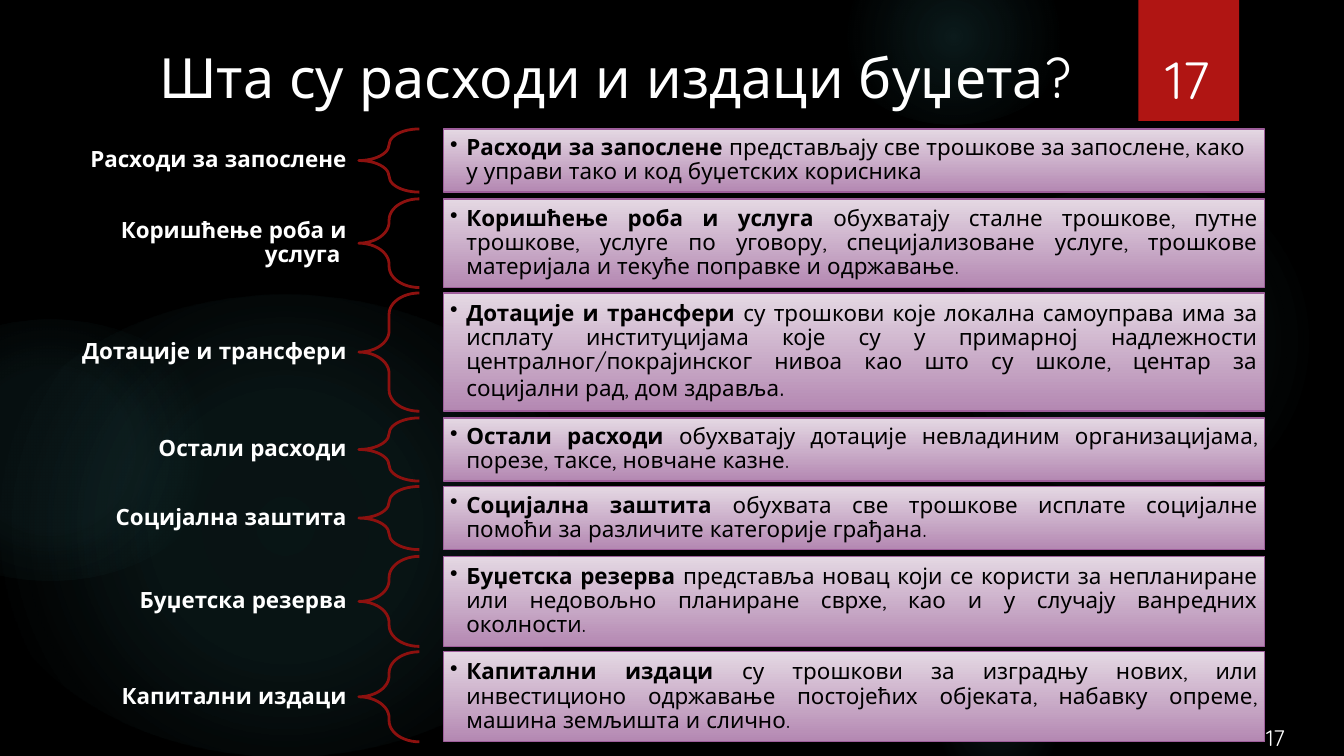
from lxml import etree
from pptx import Presentation
from pptx.dml.color import RGBColor
from pptx.enum.shapes import MSO_SHAPE
from pptx.enum.text import MSO_ANCHOR, PP_ALIGN
from pptx.oxml import parse_xml
from pptx.oxml.ns import nsdecls, qn
from pptx.util import Inches, Pt

OVAL = MSO_SHAPE.OVAL
RECTANGLE = MSO_SHAPE.RECTANGLE
LEFT_BRACE = MSO_SHAPE.LEFT_BRACE
MIDDLE = MSO_ANCHOR.MIDDLE
BOTTOM = MSO_ANCHOR.BOTTOM
LEFT = PP_ALIGN.LEFT
CENTER = PP_ALIGN.CENTER
RIGHT = PP_ALIGN.RIGHT
JUSTIFY = PP_ALIGN.JUSTIFY

COLORS = {
    "background": "000000",
    "glow": "50B9C1",
    "ribbon": "B01513",
    "brace": "8D110F",
    "box_top": "E4D8E3",
    "box_bottom": "B488B2",
    "box_line": "9E5E9B",
    "light_text": "FFFFFF",
    "dark_text": "000000",
}

GLOWS = [
    (6.89, 1.38, 3.08, 2.31, [(0, 7), (36, 6), (69, 0)]),
    (6.22, -0.38, 1.75, 1.31, [(0, 14), (36, 7), (73, 0)]),
    (6.89, 5, 1.08, 0.81, [(0, 9), (36, 5), (66, 0)]),
    (-0.17, 2.19, 4.58, 3.44, [(0, 11), (36, 10), (75, 0)]),
    (-0.92, 2.38, 2.58, 1.94, [(0, 8), (36, 8), (72, 0)]),
]

ROWS = [
    (0.96, 0.47, 0.26, LEFT, "Расходи за запослене",
     [("представљају све трошкове за запослене, како у управи тако и код буџетских корисника", 12)]),
    (1.48, 0.66, 0.44, JUSTIFY, "Коришћење роба и услуга ",
     [("обухватају сталне трошкове, путне трошкове, услуге по уговору, специјализоване услуге, "
       "трошкове материјала и текуће поправке и одржавање.", 12)]),
    (2.18, 0.88, 0.26, JUSTIFY, "Дотације и трансфери",
     [("су трошкови које локална самоуправа има за исплату институцијама које су у примарној "
       "надлежности централног/покрајинског нивоа као што су школе, центар за социјални рад, "
       "дом здравља", 12), (". ", 14)]),
    (3.11, 0.47, 0.26, JUSTIFY, "Остали расходи",
     [("обухватају дотације невладиним организацијама, порезе, таксе, новчане казне.", 12)]),
    (3.62, 0.47, 0.26, JUSTIFY, "Социјална заштита",
     [("обухвата све трошкове исплате социјалне помоћи за различите категорије грађана.", 12)]),
    (4.14, 0.67, 0.26, JUSTIFY, "Буџетска резерва",
     [("представља новац који се користи за непланиране или недовољно планиране сврхе, "
       "као и у случају ванредних околности.", 12)]),
    (4.85, 0.67, 0.26, JUSTIFY, "Капитални издаци",
     [("су трошкови за изградњу нових, или инвестиционо одржавање постојећих објеката, "
       "набавку опреме, машина земљишта и слично.", 12)]),
]


def rgb(name):
    return RGBColor.from_string(COLORS[name])


class SlideBuilder:
    font_name = "Quicksand"

    def __init__(self, slide):
        self.slide = slide
        fill = slide.background.fill
        fill.solid()
        fill.fore_color.rgb = rgb("background")

    def shape(self, kind, left, top, width, height):
        shape = self.slide.shapes.add_shape(
            kind, Inches(left), Inches(top), Inches(width), Inches(height))
        shape.shadow.inherit = False
        shape.fill.background()
        shape.line.fill.background()
        return shape

    def outline(self, shape, color, width):
        shape.line.color.rgb = rgb(color)
        shape.line.width = Pt(width)

    def set_font(self, font, size, color, bold=False):
        font.name = self.font_name
        font.size = Pt(size)
        font.color.rgb = rgb(color)
        font.bold = bold

    def set_frame(self, frame, anchor, horizontal, vertical):
        frame.word_wrap = True
        frame.vertical_anchor = anchor
        frame.margin_left = frame.margin_right = Inches(horizontal)
        frame.margin_top = frame.margin_bottom = Inches(vertical)

    def glow(self, left, top, width, height, stops):
        shape = self.shape(OVAL, left, top, width, height)
        stop_xml = "".join(
            f'<a:gs pos="{position * 1000}"><a:srgbClr val="{COLORS["glow"]}">'
            f'<a:alpha val="{alpha * 1000}"/></a:srgbClr></a:gs>'
            for position, alpha in stops)
        gradient = parse_xml(
            f'<a:gradFill {nsdecls("a")}><a:gsLst>{stop_xml}</a:gsLst><a:path path="circle">'
            '<a:fillToRect l="50000" t="50000" r="50000" b="50000"/></a:path></a:gradFill>')
        properties = shape.element.spPr
        properties.replace(properties.find(qn("a:noFill")), gradient)

    def ribbon(self, left, top, width, height):
        shape = self.shape(RECTANGLE, left, top, width, height)
        shape.fill.solid()
        shape.fill.fore_color.rgb = rgb("ribbon")
        effects = shape.element.spPr.find(qn("a:effectLst"))
        effects.append(parse_xml(
            f'<a:outerShdw {nsdecls("a")} blurRad="{Pt(3)}" dist="{Pt(2)}" dir="5400000">'
            '<a:srgbClr val="000000"><a:alpha val="45000"/></a:srgbClr></a:outerShdw>'))

    def text(self, text, left, top, width, height, size, align, anchor=MIDDLE,
             bold=False, margins=(0.1, 0.05), line_spacing=1.0):
        text_box = self.slide.shapes.add_textbox(
            Inches(left), Inches(top), Inches(width), Inches(height))
        self.set_frame(text_box.text_frame, anchor, *margins)
        paragraph = text_box.text_frame.paragraphs[0]
        paragraph.text = text
        paragraph.alignment = align
        paragraph.line_spacing = line_spacing
        self.set_font(paragraph.font, size, "light_text", bold)

    def brace(self, left, top, width, height):
        shape = self.shape(LEFT_BRACE, left, top, width, height)
        shape.adjustments[0] = 0.35
        shape.adjustments[1] = 0.5
        self.outline(shape, "brace", 1.5)

    def description(self, left, top, width, height, align, term, parts):
        shape = self.shape(RECTANGLE, left, top, width, height)
        shape.fill.gradient()
        shape.fill.gradient_angle = 270
        for stop, color in zip(shape.fill.gradient_stops, ("box_top", "box_bottom")):
            stop.color.rgb = rgb(color)
        self.outline(shape, "box_line", 0.75)
        self.set_frame(shape.text_frame, MIDDLE, 0.05, 0.05)
        paragraph = shape.text_frame.paragraphs[0]
        paragraph.alignment = align
        paragraph.level = 1
        paragraph.line_spacing = 0.9
        paragraph.space_after = Pt(1.8)
        for text, size, bold in [(term, 12, True)] + [(*part, False) for part in parts]:
            run = paragraph.add_run()
            run.text = text
            self.set_font(run.font, size, "dark_text", bold)
        properties = paragraph._p.get_or_add_pPr()
        properties.set("marL", str(Inches(0.12)))
        properties.set("indent", str(Inches(-0.12)))
        etree.SubElement(properties, qn("a:buChar"), char="•")

    def row(self, top, height, label_height, align, term, parts):
        label_top = top + (height - label_height) / 2
        self.text(term, 0.42, label_top, 2.25, label_height, 12, RIGHT,
                  bold=True, margins=(0.09, 0.03), line_spacing=0.9)
        self.brace(2.67, top, 0.45, height)
        self.description(3.3, top, 6.11, height, align, term.strip() + " ", parts)


def main():
    presentation = Presentation()
    presentation.slide_width = Inches(10)
    presentation.slide_height = Inches(10 * 9 / 16)
    builder = SlideBuilder(presentation.slides.add_slide(presentation.slide_layouts[6]))
    for glow in GLOWS:
        builder.glow(*glow)
    builder.ribbon(8.47, 0, 0.75, 0.9)
    builder.text("17", 8.49, 0.24, 0.69, 0.63, 28, CENTER, BOTTOM)
    builder.text("Шта су расходи и издаци буџета?", 0.08, 0.31, 9, 0.51, 29.7, CENTER)
    for row in ROWS:
        builder.row(*row)
    builder.text("17", 7.33, 5.34, 2.33, 0.3, 12, RIGHT)
    presentation.save("out.pptx")


if __name__ == "__main__":
    main()
